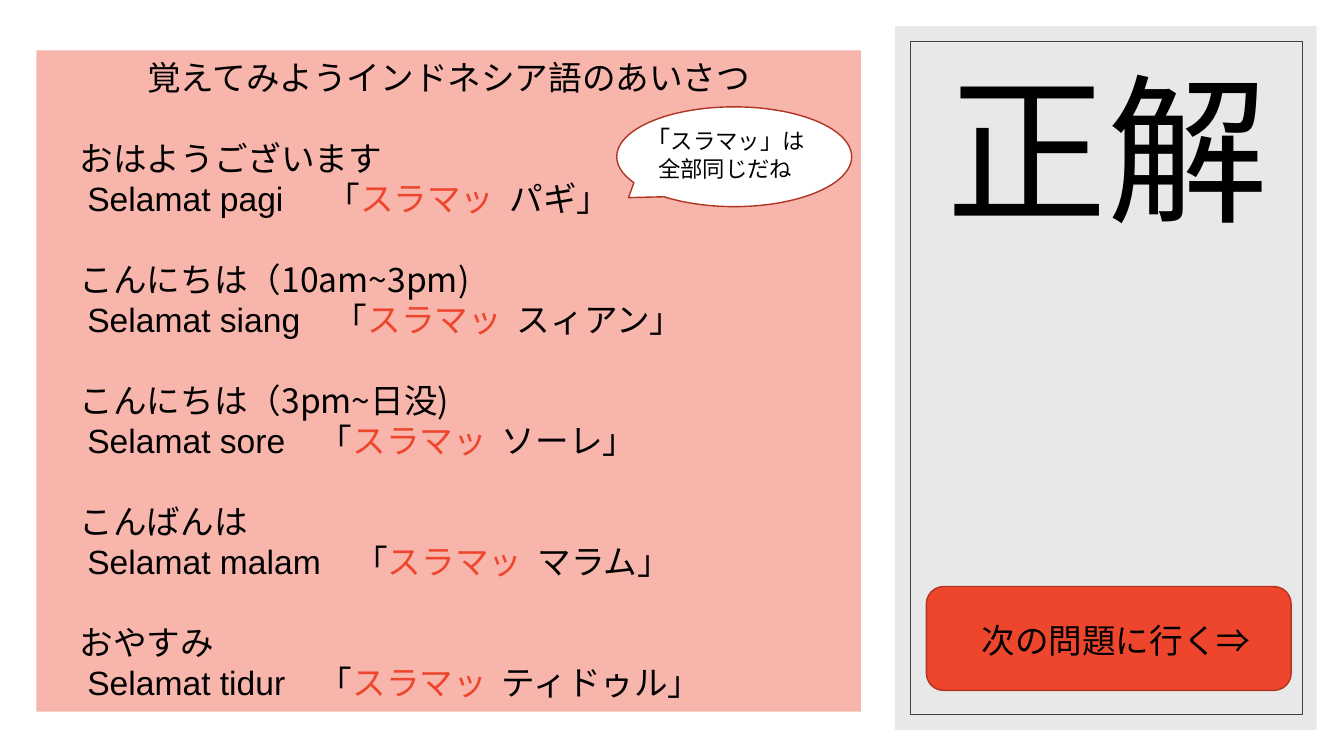
from lxml.etree import SubElement
from pptx import Presentation
from pptx.dml.color import RGBColor
from pptx.enum.shapes import MSO_SHAPE as Shape
from pptx.enum.text import MSO_ANCHOR as Anchor, PP_ALIGN as Align
from pptx.oxml.ns import qn
from pptx.util import Pt

BLACK = RGBColor(0x00, 0x00, 0x00)
WHITE = RGBColor(0xFF, 0xFF, 0xFF)
RED = RGBColor(0xEE, 0x46, 0x2D)
DARK_RED = RGBColor(0xB0, 0x34, 0x21)
PINK = RGBColor(0xF8, 0xB5, 0xAB)
GREY = RGBColor(0xD9, 0xD9, 0xD9)
DARK_GREY = RGBColor(0x40, 0x40, 0x40)

LATIN = "Arial"
JAPANESE = "Noto Sans CJK JP"
LEADING = 1.2

GREETINGS = [
    ("おはようございます", "Selamat pagi 　", "パギ"),
    ("こんにちは（10am~3pm)", "Selamat siang　", "スィアン"),
    ("こんにちは（3pm~日没)", "Selamat sore　", "ソーレ"),
    ("こんばんは", "Selamat malam　", "マラム"),
    ("おやすみ", "Selamat tidur　", "ティドゥル"),
]


def add_run(paragraph, text, size=24, font=JAPANESE, color=BLACK):
    """Append a run in one font for both Latin and Japanese letters."""
    run = paragraph.add_run()
    run.text = text
    run.font.size = Pt(size)
    run.font.name = font
    run.font.color.rgb = color
    SubElement(run.font._element, qn("a:ea"), typeface=font)


class SlideBuilder:
    """Holds the current slide and draws its kinds of element."""

    def __init__(self, slide):
        self.shapes = slide.shapes

    def box(self, kind, left, top, width, height, fill=None, line=None, weight=1, alpha=None):
        shape = self.shapes.add_shape(kind, Pt(left), Pt(top), Pt(width), Pt(height))
        shape.shadow.inherit = False
        if fill is None:
            shape.fill.background()
        else:
            shape.fill.solid()
            shape.fill.fore_color.rgb = fill
        if alpha is not None:
            color = shape.fill._xPr.find(qn("a:solidFill"))[0]
            SubElement(color, qn("a:alpha"), val=str(alpha * 1000))
        if line is None:
            shape.line.fill.background()
        else:
            shape.line.color.rgb = line
            shape.line.width = Pt(weight)
        return shape

    def text_frame(self, left, top, width, height, anchor=Anchor.TOP):
        frame = self.shapes.add_textbox(Pt(left), Pt(top), Pt(width), Pt(height)).text_frame
        frame.word_wrap = True
        frame.vertical_anchor = anchor
        return frame

    def paragraph(self, frame, size=24, align=Align.LEFT, indent=0, before=0):
        first = frame.paragraphs[0]
        paragraph = frame.add_paragraph() if first.runs else first
        paragraph.alignment = align
        paragraph.line_spacing = Pt(size * LEADING)
        paragraph.space_before = Pt(before)
        if indent:
            paragraph._p.get_or_add_pPr().set("marL", str(Pt(indent)))
        return paragraph


def main():
    deck = Presentation()
    deck.slide_width, deck.slide_height = Pt(960), Pt(540)
    builder = SlideBuilder(deck.slides.add_slide(deck.slide_layouts[6]))

    # Side panel with its inner frame
    builder.box(Shape.RECTANGLE, 639.4, 18.7, 301, 502.6, fill=GREY, alpha=60)
    builder.box(Shape.RECTANGLE, 650.2, 29.5, 280, 481, line=DARK_GREY, weight=0.5)

    # Verdict
    verdict = builder.text_frame(667.4, 47.5, 247.7, 129.6, Anchor.BOTTOM)
    add_run(builder.paragraph(verdict, 115, Align.CENTER), "正解", size=115, font=LATIN)

    # Button to the next question
    builder.box(Shape.ROUNDED_RECTANGLE, 661.7, 419, 260.6, 74.2, fill=RED, line=DARK_RED)
    next_question = builder.text_frame(694.1, 439.2, 221, 36)
    add_run(builder.paragraph(next_question), "次の問題に行く⇒", font=LATIN)

    # Greetings panel
    panel = builder.box(Shape.RECTANGLE, 25.9, 36, 589, 472.3, fill=PINK)
    greetings = panel.text_frame
    greetings.word_wrap = True
    greetings.vertical_anchor = Anchor.TOP
    greetings.margin_top = Pt(5)
    add_run(builder.paragraph(greetings, align=Align.CENTER), "覚えてみようインドネシア語のあいさつ")
    for japanese, indonesian, reading in GREETINGS:
        add_run(builder.paragraph(greetings, indent=24, before=24 * LEADING), japanese)
        phrase = builder.paragraph(greetings, indent=29.4)
        add_run(phrase, indonesian, font=LATIN)
        add_run(phrase, "「")
        add_run(phrase, "スラマッ", color=RED)
        add_run(phrase, f"  {reading}」")

    # Speech bubble
    bubble = builder.box(Shape.OVAL_CALLOUT, 440.6, 76.3, 167.8, 71.3, fill=WHITE, line=DARK_RED)
    bubble.adjustments[0], bubble.adjustments[1] = -0.45, 0.41
    hint = builder.paragraph(builder.text_frame(449.3, 87.8, 137.5, 48.2), 16, Align.CENTER)
    add_run(hint, "「", size=18, font=LATIN)
    add_run(hint, "スラマッ」は全部同じだね", size=16)

    deck.save("out.pptx")


if __name__ == "__main__":
    main()
